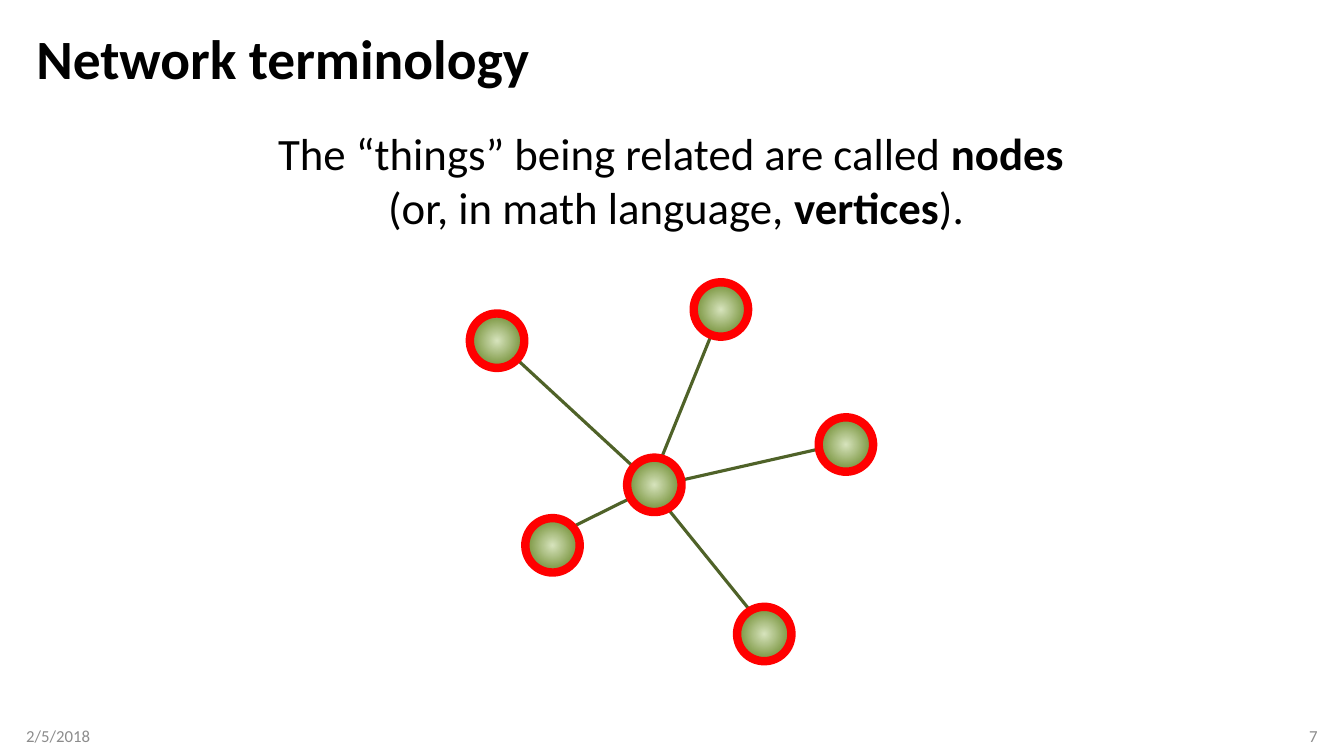
"""Build the network terminology slide with its six-node star graph."""
from lxml import etree
from pptx import Presentation
from pptx.dml.color import RGBColor
from pptx.enum.shapes import MSO_CONNECTOR as CONNECTOR, MSO_SHAPE as SHAPE
from pptx.enum.text import MSO_ANCHOR as ANCHOR, MSO_AUTO_SIZE as AUTO_SIZE, PP_ALIGN as ALIGN
from pptx.oxml import parse_xml
from pptx.oxml.ns import nsdecls, qn
from pptx.util import Pt

PX = 9144
NODE_SIZE = 54


def color(hex_value):
    return RGBColor.from_string(hex_value)


def write(shape, lines, size, hex_value="000000", align=ALIGN.LEFT, anchor=ANCHOR.MIDDLE,
          left=10, right=10, spacing=1.0):
    """Fill a shape with lines, each a list of (text, bold) runs."""
    frame = shape.text_frame
    frame.word_wrap = True
    frame.auto_size = AUTO_SIZE.NONE
    frame.vertical_anchor = anchor
    frame.margin_left, frame.margin_right = left * PX, right * PX
    frame.margin_top = frame.margin_bottom = 5 * PX
    for index, runs in enumerate(lines):
        paragraph = frame.add_paragraph() if index else frame.paragraphs[0]
        paragraph.alignment = align
        paragraph.line_spacing = spacing
        for text, bold in runs:
            run = paragraph.add_run()
            run.text = text
            run.font.name = "Calibri"
            run.font.size = Pt(size)
            run.font.bold = bold
            run.font.color.rgb = color(hex_value)


presentation = Presentation()
presentation.slide_width, presentation.slide_height = 1333 * PX, 750 * PX
slide = presentation.slides.add_slide(presentation.slide_layouts[5])
shapes = slide.shapes

title = shapes.title
title.left, title.top, title.width, title.height = 26 * PX, 25 * PX, 1281 * PX, 72 * PX
write(title, [[("Network terminology", True)]], size=39.6, spacing=0.9)

date = shapes.add_textbox(26 * PX, 710 * PX, 300 * PX, 40 * PX)
write(date, [[("2/5/2018", False)]], size=12, hex_value="8C8C8C", left=0)

slide_number = shapes.add_textbox(1007 * PX, 710 * PX, 300 * PX, 40 * PX)
write(slide_number, [[("7", False)]], size=12, hex_value="8C8C8C", align=ALIGN.RIGHT, right=0)

definition = shapes.add_textbox(67 * PX, 120 * PX, 1207 * PX, 118 * PX)
write(definition, [
    [("The “things” being related are called ", False), ("nodes ", True)],
    [("(or, in math language, ", False), ("vertices", True), (").", False)],
], size=32, align=ALIGN.CENTER, anchor=ANCHOR.TOP)

edges = [
    (541, 536, 648, 483),
    (642, 489, 719, 299),
    (484, 330, 653, 486),
    (644, 482, 758, 623),
    (651, 482, 841, 439),
]
for ends in edges:
    edge = shapes.add_connector(CONNECTOR.STRAIGHT, *[value * PX for value in ends])
    edge.line.color.rgb = color("4F6228")
    edge.line.width = Pt(2.25)
    etree.SubElement(edge.element.spPr, qn("a:effectLst"))

nodes = [(466, 311), (521, 514), (731, 602), (688, 280), (812, 414), (622, 454)]
for left, top in nodes:
    node = shapes.add_shape(SHAPE.OVAL, left * PX, top * PX, NODE_SIZE * PX, NODE_SIZE * PX)
    node.rotation = 327.4
    node.shadow.inherit = False
    node.line.color.rgb = color("FF0000")
    node.line.width = Pt(6)
    node.fill.gradient()
    for stop, position, hex_value in zip(node.fill.gradient_stops, (0, 0.5), ("D7E4BD", "77933C")):
        stop.position = position
        stop.color.rgb = color(hex_value)
    linear = node.element.spPr.find(qn("a:gradFill")).find(qn("a:lin"))
    linear.getparent().replace(linear, parse_xml(
        f'<a:path {nsdecls("a")} path="circle">'
        '<a:fillToRect l="50000" t="50000" r="50000" b="50000"/></a:path>'))

presentation.save("out.pptx")
